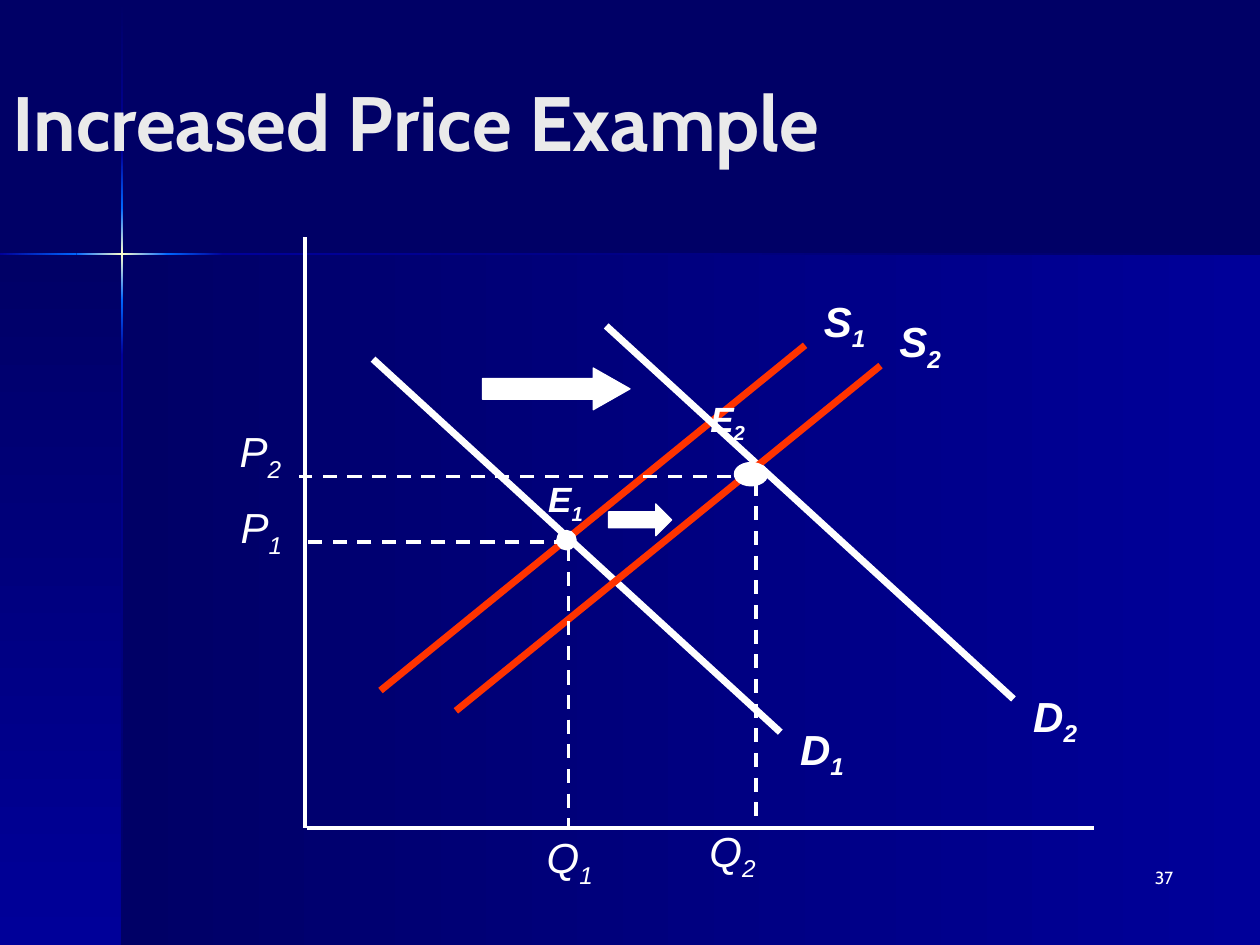
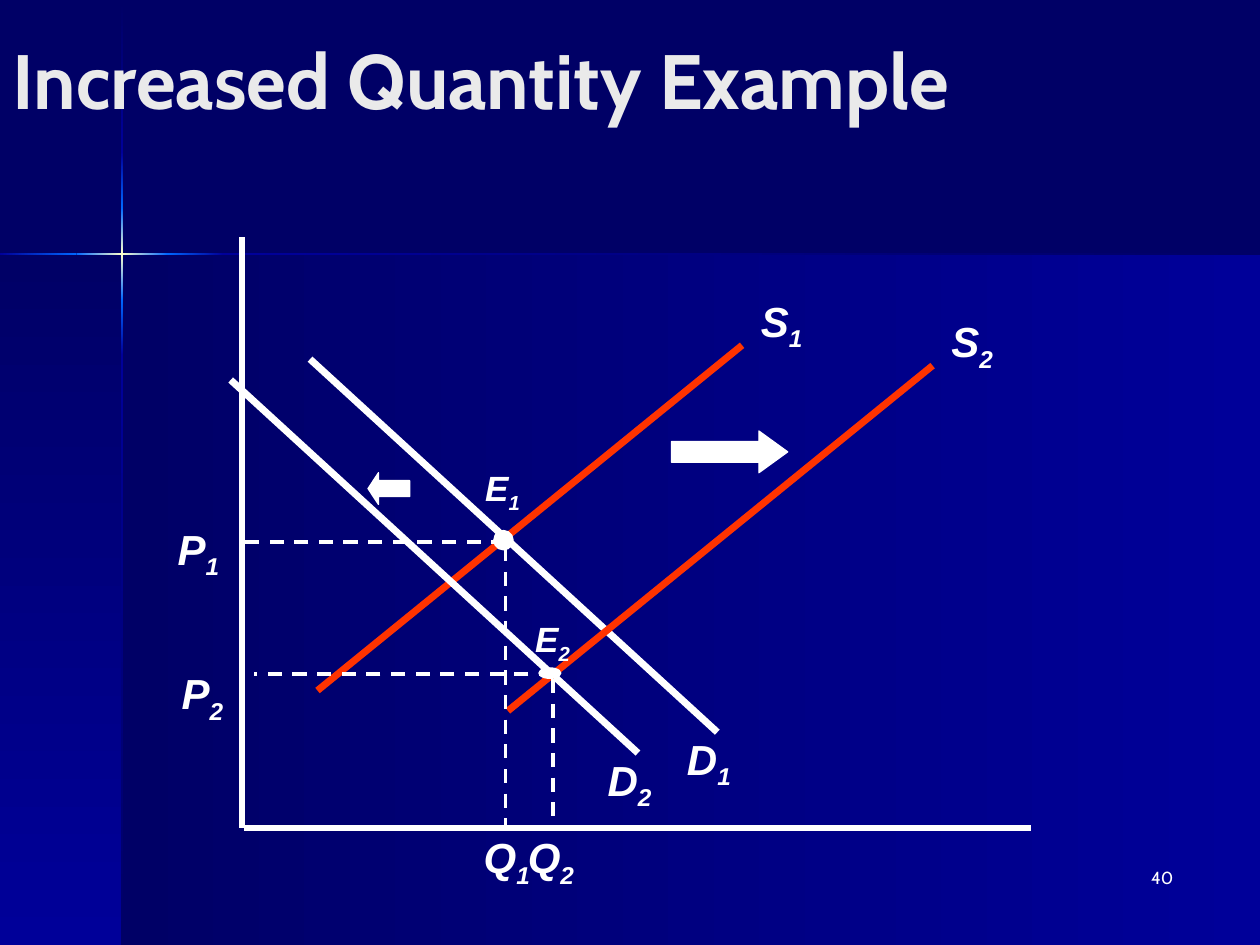
import collections
import itertools

import lxml.etree
import pptx
import pptx.dml.color
import pptx.enum.dml
import pptx.enum.shapes
import pptx.enum.text
import pptx.oxml.ns
import pptx.util

Cm = pptx.util.Cm
Pt = pptx.util.Pt
RGBColor = pptx.dml.color.RGBColor
AutoShape = pptx.enum.shapes.MSO_SHAPE

NAVY = RGBColor(0x00, 0x00, 0x66)
BLUE = RGBColor(0x00, 0x00, 0x99)
BRIGHT = RGBColor(0x00, 0x66, 0xFF)
GLOW = RGBColor(0xFF, 0xFF, 0xCC)
TITLE_GREY = RGBColor(0xEA, 0xEA, 0xEA)
WHITE = RGBColor(0xFF, 0xFF, 0xFF)
SUPPLY_RED = RGBColor(0xFF, 0x33, 0x00)

HEADING_FONT = "Cabin"
LABEL_FONT = "Arial"
SLIDE_WIDTH, SLIDE_HEIGHT = 25.4, 19.05
CROSS_X, CROSS_Y, RAY_WIDTH = 2.46, 5.12, 0.05

AXIS_HEIGHT, AXIS_WIDTH = 11.91, 15.9
SUPPLY = ((1.52, 9.14), (10.08, 2.18))
DEMAND = ((1.37, 2.46), (9.58, 9.98))
SUPPLY_LABEL_GAP = (0.13, -1.13)
LABEL_WIDTHS = {"S": 1.37, "P": 1.37, "D": 1.47, "Q": 1.47, "E": 1.22}

Graph = collections.namedtuple("Graph", "slide left top bold_axis_labels")
Equilibrium = collections.namedtuple(
    "Equilibrium", "number dot corner foot left_end price quantity name")


def add_run(paragraph, text, size, color, font, bold=False, italic=False):
    run = paragraph.add_run()
    run.text = text
    run.font.size = Pt(size)
    run.font.name = font
    run.font.color.rgb = color
    run.font.bold = bold
    run.font.italic = italic
    return run


def add_gradient_band(slide, left, top, width, height, colors, downward):
    band = slide.shapes.add_shape(
        AutoShape.RECTANGLE, Cm(left), Cm(top), Cm(width), Cm(height))
    band.shadow.inherit = False
    band.line.fill.background()
    band.fill.gradient()
    band.fill.gradient_angle = 270 if downward else 0
    for stop, color in zip(band.fill.gradient_stops, colors):
        stop.color.rgb = color
    return band


def add_ray(slide, stops, downward):
    """Draw one arm of the cross as a chain of two-colour gradients."""
    pieces = []
    for (start, first), (end, last) in itertools.pairwise(stops):
        if downward:
            box = (CROSS_X - RAY_WIDTH / 2, start, RAY_WIDTH, end - start)
        else:
            box = (start, CROSS_Y - RAY_WIDTH / 2, end - start, RAY_WIDTH)
        pieces.append(add_gradient_band(slide, *box, (first, last), downward))
    return pieces


def decorate_master(slide):
    """Draw the shared backdrop, then move it to the slide's master."""
    master = slide.slide_layout.slide_master
    master.background.fill.solid()
    master.background.fill.fore_color.rgb = NAVY
    lower = SLIDE_HEIGHT - CROSS_Y
    decorations = [
        add_gradient_band(slide, CROSS_X, CROSS_Y, SLIDE_WIDTH - CROSS_X, lower,
                          (NAVY, BLUE), False),
        add_gradient_band(slide, 0, CROSS_Y, CROSS_X, lower, (NAVY, BLUE), True),
        *add_ray(slide, [(0.03, NAVY), (3.07, BLUE), (4.19, BRIGHT), (CROSS_Y, GLOW),
                         (6.05, BRIGHT), (7.16, BLUE), (SLIDE_HEIGHT, NAVY)], True),
        *add_ray(slide, [(0, BLUE), (1.54, BRIGHT), (CROSS_X, GLOW), (3.38, BRIGHT),
                         (4.5, BLUE), (SLIDE_WIDTH, NAVY)], False),
    ]
    for position, shape in enumerate(decorations, start=2):
        master.shapes.element.insert(position, shape.element)


def fill_title(slide, text, top):
    title = slide.shapes.title
    title.left, title.top = Cm(0), Cm(top)
    title.width, title.height = Cm(SLIDE_WIDTH), Cm(3.18)
    frame = title.text_frame
    frame.auto_size = pptx.enum.text.MSO_AUTO_SIZE.NONE
    frame.vertical_anchor = pptx.enum.text.MSO_ANCHOR.MIDDLE
    paragraph = frame.paragraphs[0]
    paragraph.alignment = pptx.enum.text.PP_ALIGN.LEFT
    add_run(paragraph, text, 44, TITLE_GREY, HEADING_FONT, bold=True)


def add_page_number(slide, number):
    box = slide.shapes.add_textbox(Cm(18.62), Cm(17.35), Cm(5.28), Cm(1.27))
    box.text_frame.word_wrap = True
    paragraph = box.text_frame.paragraphs[0]
    paragraph.alignment = pptx.enum.text.PP_ALIGN.RIGHT
    add_run(paragraph, str(number), 10, WHITE, HEADING_FONT)


def add_line(graph, start, end, color, width, dashed=False):
    connector = graph.slide.shapes.add_connector(
        pptx.enum.shapes.MSO_CONNECTOR.STRAIGHT,
        Cm(graph.left + start[0]), Cm(graph.top + start[1]),
        Cm(graph.left + end[0]), Cm(graph.top + end[1]))
    connector.line.color.rgb = color
    connector.line.width = Pt(width)
    if dashed:
        connector.line.dash_style = pptx.enum.dml.MSO_LINE.DASH
    lxml.etree.SubElement(connector.element.spPr, pptx.oxml.ns.qn("a:effectLst"))


def add_solid_shape(graph, kind, box, line_width):
    left, top, width, height = box
    shape = graph.slide.shapes.add_shape(
        kind, Cm(graph.left + left), Cm(graph.top + top), Cm(width), Cm(height))
    shape.shadow.inherit = False
    shape.fill.solid()
    shape.fill.fore_color.rgb = WHITE
    shape.line.color.rgb = WHITE
    shape.line.width = Pt(line_width)
    return shape


def add_label(graph, letter, number, position, size=24, bold=True):
    """Write an italic letter with its number as a subscript."""
    box = graph.slide.shapes.add_textbox(
        Cm(graph.left + position[0]), Cm(graph.top + position[1]),
        Cm(LABEL_WIDTHS[letter]), Cm(1.09 if size == 20 else 1.28))
    box.text_frame.word_wrap = False
    box.text_frame.auto_size = pptx.enum.text.MSO_AUTO_SIZE.SHAPE_TO_FIT_TEXT
    paragraph = box.text_frame.paragraphs[0]
    add_run(paragraph, letter, size, WHITE, LABEL_FONT, bold, True)
    subscript = add_run(paragraph, str(number), size, WHITE, LABEL_FONT, bold, True)
    subscript.font._element.set("baseline", "-25000")


def add_axes(graph, width):
    add_line(graph, (0, 0), (0, AXIS_HEIGHT), WHITE, width)
    add_line(graph, (0.03, AXIS_HEIGHT), (AXIS_WIDTH, AXIS_HEIGHT), WHITE, width)


def add_curve(graph, letter, number, curve, color, label_gap, shift=(0, 0)):
    start, end = [(x + shift[0], y + shift[1]) for x, y in curve]
    add_line(graph, start, end, color, 4)
    add_label(graph, letter, number, (end[0] + label_gap[0], end[1] + label_gap[1]))


def add_curves(graph, supply_shift, demand_shift, demand_label_gap):
    for number, supply_move, demand_move in (
            (1, (0, 0), (0, 0)), (2, supply_shift, demand_shift)):
        add_curve(graph, "D", number, DEMAND, WHITE, demand_label_gap, demand_move)
        add_curve(graph, "S", number, SUPPLY, SUPPLY_RED, SUPPLY_LABEL_GAP, supply_move)


def add_equilibrium(graph, point):
    """Mark a crossing and project it onto both axes."""
    x, y = point.corner
    add_solid_shape(graph, AutoShape.OVAL, point.dot, 1)
    add_line(graph, (x, y + 0.1), (x, point.foot), WHITE, 2, dashed=True)
    add_line(graph, (x, y), (point.left_end, y), WHITE, 2, dashed=True)
    add_label(graph, "P", point.number, point.price, bold=graph.bold_axis_labels)
    add_label(graph, "Q", point.number, point.quantity, bold=graph.bold_axis_labels)
    add_label(graph, "E", point.number, point.name, size=20)


def add_shift_arrow(graph, kind, box, head):
    arrow = add_solid_shape(graph, kind, box, 0.75)
    arrow.adjustments[0] = 0.5
    arrow.adjustments[1] = head


def first_equilibrium(price_top, name_top):
    return Equilibrium(1, (5.08, 5.92, 0.38, 0.38), (5.31, 6.15), 11.89, -0.03,
                       (-1.55, price_top), (4.62, 11.86), (4.65, name_top))


def build_price_slide(slide):
    fill_title(slide, "Increased Price Example", 0.84)
    add_page_number(slide, 37)
    graph = Graph(slide, 6.15, 4.78, False)
    add_axes(graph, 2)
    add_curves(graph, (1.52, 0.41), (4.7, -0.67), (0.15, -0.3))
    add_equilibrium(graph, first_equilibrium(5.21, 4.72))
    add_equilibrium(graph, Equilibrium(
        2, (8.66, 4.55, 0.66, 0.46), (9.09, 4.83), 11.79, -0.13,
        (-1.57, 3.68), (7.9, 11.73), (7.92, 3.1)))
    add_shift_arrow(graph, AutoShape.RIGHT_ARROW, (3.58, 2.64, 2.97, 0.84), 0.88)
    add_shift_arrow(graph, AutoShape.RIGHT_ARROW, (6.12, 5.38, 1.27, 0.64), 0.5)


def build_quantity_slide(slide):
    fill_title(slide, "Increased Quantity Example", 0)
    add_page_number(slide, 40)
    graph = Graph(slide, 4.88, 4.78, True)
    add_axes(graph, 3)
    add_curves(graph, (3.84, 0.41), (-1.6, 0.42), (-0.86, -0.1))
    add_equilibrium(graph, first_equilibrium(5.64, 4.5))
    add_equilibrium(graph, Equilibrium(
        2, (5.99, 8.69, 0.43, 0.2), (6.27, 8.81), 11.89, 0.25,
        (-1.47, 8.56), (5.51, 11.86), (5.66, 7.54)))
    add_shift_arrow(graph, AutoShape.RIGHT_ARROW, (8.66, 3.91, 2.34, 0.84), 0.69)
    add_shift_arrow(graph, AutoShape.LEFT_ARROW, (2.54, 4.75, 0.84, 0.64), 0.33)


def main():
    presentation = pptx.Presentation()
    presentation.slide_width = Cm(SLIDE_WIDTH)
    presentation.slide_height = Cm(SLIDE_HEIGHT)
    title_only = presentation.slide_layouts.get_by_name("Title Only")
    price_slide = presentation.slides.add_slide(title_only)
    decorate_master(price_slide)
    build_price_slide(price_slide)
    build_quantity_slide(presentation.slides.add_slide(title_only))
    presentation.save("out.pptx")


if __name__ == "__main__":
    main()
